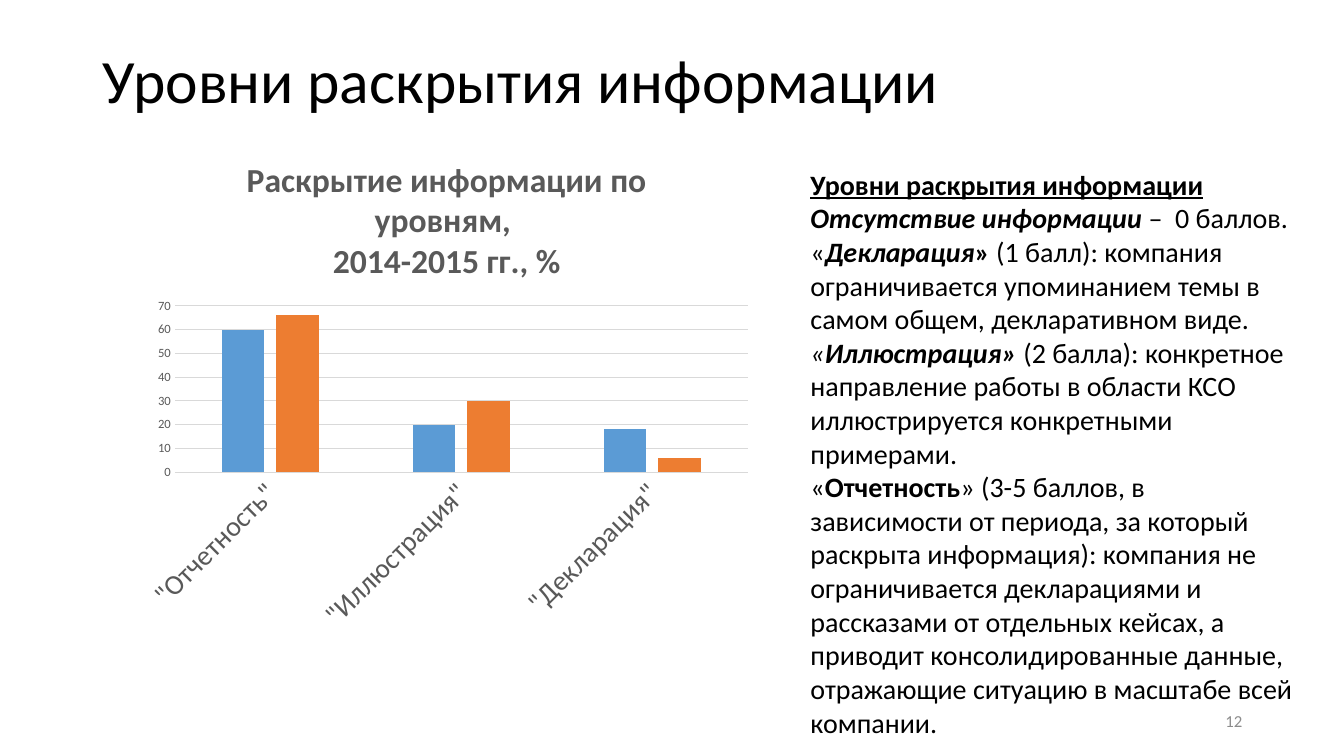
from dataclasses import dataclass

from pptx import Presentation
from pptx.chart import data as chart_data
from pptx.dml.color import RGBColor
from pptx.enum import chart as chart_enum, text as text_enum
from pptx.util import Inches, Pt

FONT = "Calibri"
BLACK = RGBColor(0x00, 0x00, 0x00)
PAGE_GRAY = RGBColor(0x8C, 0x8C, 0x8C)
LABEL_GRAY = RGBColor(0x59, 0x59, 0x59)
GRID_GRAY = RGBColor(0xD9, 0xD9, 0xD9)
BLUE = RGBColor(0x5B, 0x9B, 0xD5)
ORANGE = RGBColor(0xED, 0x7D, 0x31)


@dataclass(frozen=True)
class Span:
    text: str
    bold: bool = False
    italic: bool = False
    underline: bool = False


@dataclass(frozen=True)
class Series:
    name: str
    values: tuple[int, ...]
    color: RGBColor


LEVELS = [
    [Span("Уровни раскрытия информации", bold=True, underline=True)],
    [Span("Отсутствие информации ", bold=True, italic=True), Span("–  0 баллов.")],
    [
        Span("«"),
        Span("Декларация", bold=True, italic=True),
        Span("»", bold=True),
        Span(" (1 балл): компания ограничивается упоминанием темы в самом общем, "
             "декларативном виде."),
    ],
    [
        Span("«", italic=True),
        Span("Иллюстрация» ", bold=True, italic=True),
        Span("(2 балла): конкретное направление работы в области КСО "
             "иллюстрируется конкретными примерами."),
    ],
    [
        Span("«"),
        Span("Отчетность", bold=True),
        Span("» (3-5 баллов, в зависимости от периода, за который раскрыта "
             "информация): компания не ограничивается декларациями и рассказами "
             "от отдельных кейсах, а приводит консолидированные данные, "
             "отражающие ситуацию в масштабе всей компании."),
    ],
]
CATEGORIES = ['"Отчетность"', '"Иллюстрация"', '"Декларация"']
SERIES = [
    Series("Series 1", (60, 20, 18), BLUE),
    Series("Series 2", (66, 30, 6), ORANGE),
]


def format_font(font, size: float, color: RGBColor, bold: bool = False,
                italic: bool = False, underline: bool = False) -> None:
    font.name = FONT
    font.size = Pt(size)
    font.color.rgb = color
    font.bold = bold
    font.italic = italic
    font.underline = underline


def write_text(frame, paragraphs: list[list[Span]], *, size: float,
               color: RGBColor = BLACK, align=text_enum.PP_ALIGN.LEFT,
               anchor=text_enum.MSO_ANCHOR.TOP, spacing: float = 1.0) -> None:
    frame.word_wrap = True
    frame.auto_size = text_enum.MSO_AUTO_SIZE.NONE
    frame.vertical_anchor = anchor
    for index, spans in enumerate(paragraphs):
        para = frame.paragraphs[0] if index == 0 else frame.add_paragraph()
        para.alignment = align
        para.line_spacing = spacing
        for span in spans:
            run = para.add_run()
            run.text = span.text
            format_font(run.font, size, color, span.bold, span.italic, span.underline)


def add_title(page) -> None:
    title = page.shapes.title
    title.left, title.top = Inches(0.92), Inches(0.1)
    title.width, title.height = Inches(11.5), Inches(1.45)
    write_text(title.text_frame, [[Span("Уровни раскрытия информации")]], size=44,
               anchor=text_enum.MSO_ANCHOR.MIDDLE, spacing=0.9)


def add_levels_chart(page) -> None:
    data = chart_data.CategoryChartData()
    data.categories = CATEGORIES
    for series in SERIES:
        data.add_series(series.name, series.values)
    chart = page.shapes.add_chart(
        chart_enum.XL_CHART_TYPE.COLUMN_CLUSTERED,
        Inches(1.32), Inches(1.39), Inches(6.22), Inches(4.98), data).chart
    format_font(chart.font, 10, BLACK)
    chart.has_legend = False
    chart.has_title = True
    chart.chart_title.include_in_layout = False
    heading = [[Span("Раскрытие информации по уровням, ", bold=True)],
               [Span("2014-2015 гг., %", bold=True)]]
    write_text(chart.chart_title.text_frame, heading, size=24, color=LABEL_GRAY,
               align=text_enum.PP_ALIGN.CENTER)

    plot = chart.plots[0]
    plot.gap_width = 219
    plot.overlap = -27
    plot.vary_by_categories = False
    for bars, series in zip(plot.series, SERIES):
        bars.format.fill.solid()
        bars.format.fill.fore_color.rgb = series.color
        bars.invert_if_negative = False

    for axis, size in ((chart.category_axis, 20), (chart.value_axis, 9)):
        axis.major_tick_mark = chart_enum.XL_TICK_MARK.NONE
        axis.minor_tick_mark = chart_enum.XL_TICK_MARK.NONE
        format_font(axis.tick_labels.font, size, LABEL_GRAY)
    body = chart.category_axis.format.line
    body.color.rgb = GRID_GRAY
    body.width = Pt(0.75)
    label_properties = chart.category_axis._element.txPr.bodyPr
    label_properties.set("rot", "-2700000")
    label_properties.set("vert", "horz")

    values = chart.value_axis
    values.minimum_scale, values.maximum_scale, values.major_unit = 0, 70, 10
    values.format.line.fill.background()
    values.has_major_gridlines = True
    grid = values.major_gridlines.format.line
    grid.color.rgb = GRID_GRAY
    grid.width = Pt(0.75)


def main() -> None:
    deck = Presentation()
    deck.slide_width, deck.slide_height = Inches(13.33), Inches(7.5)
    page = deck.slides.add_slide(deck.slide_layouts.get_by_name("Title Only"))
    add_title(page)
    number = page.shapes.add_textbox(Inches(9.42), Inches(6.95), Inches(3), Inches(0.4))
    write_text(number.text_frame, [[Span("12")]], size=12, color=PAGE_GRAY,
               align=text_enum.PP_ALIGN.RIGHT, anchor=text_enum.MSO_ANCHOR.MIDDLE)
    levels = page.shapes.add_textbox(Inches(7.94), Inches(1.61), Inches(5.04), Inches(5.82))
    write_text(levels.text_frame, LEVELS, size=20)
    add_levels_chart(page)
    deck.save("out.pptx")


if __name__ == "__main__":
    main()
